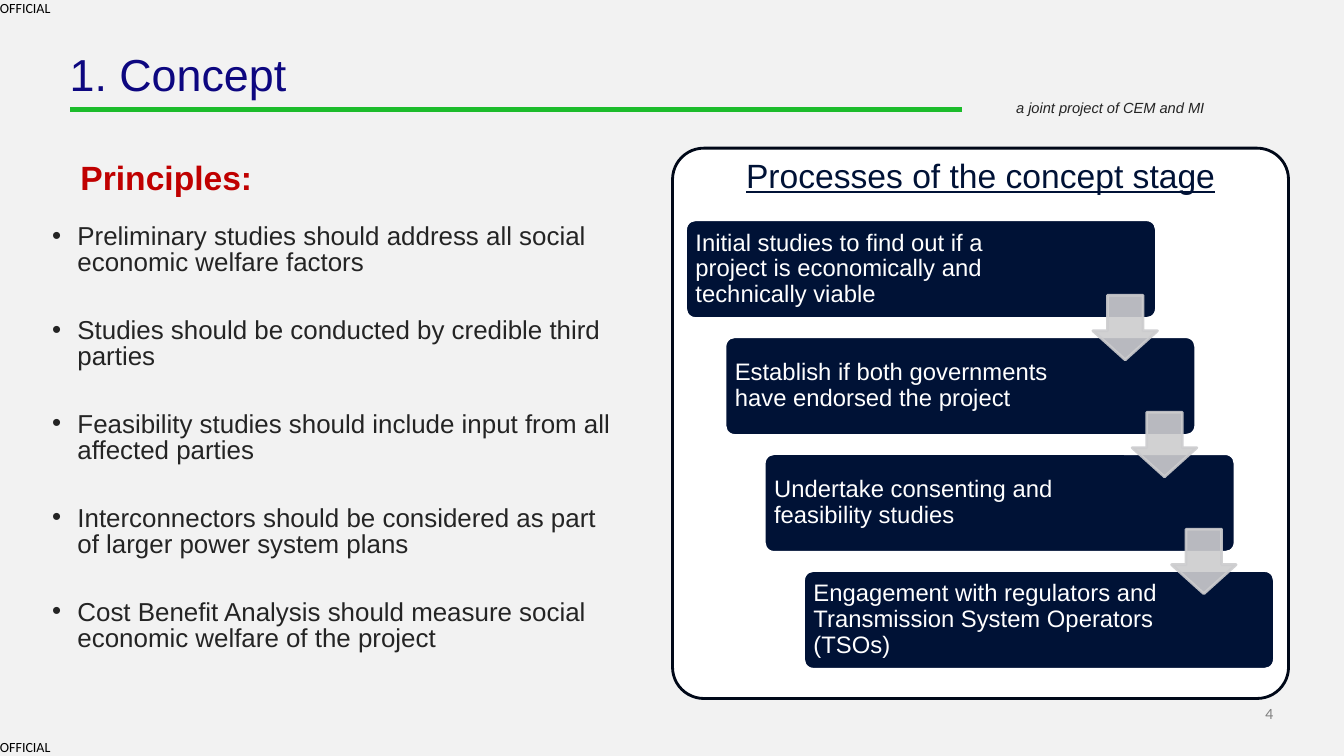
"""Build the concept stage slide."""
from pptx import Presentation
from pptx.dml.color import RGBColor
from pptx.enum.shapes import MSO_SHAPE
from pptx.enum.text import MSO_ANCHOR, MSO_AUTO_SIZE, PP_ALIGN
from pptx.oxml.ns import qn
from pptx.util import Inches, Pt
from lxml.etree import SubElement

HUES = {
    "back": "F2F2F2", "navy": "001236", "edge": "000818", "white": "FFFFFF",
    "green": "1CBC2B", "title": "0D0780", "red": "C00000", "body": "242424",
    "black": "000000", "grey": "7F7F7F", "arrow": "CCCCCE",
}
RULES = [
    "Preliminary studies should address all social economic welfare factors",
    "Studies should be conducted by credible third parties",
    "Feasibility studies should include input from all affected parties",
    "Interconnectors should be considered as part of larger power system plans",
    "Cost Benefit Analysis should measure social economic welfare of the project",
]
STEPS = [
    "Initial studies to find out if a project is economically and technically viable",
    "Establish if both governments have endorsed the project",
    "Undertake consenting and feasibility studies",
    "Engagement with regulators and Transmission System Operators (TSOs)",
]


def hue(name):
    return RGBColor.from_string(HUES[name])


def place(shape, box):
    shape.left, shape.top, shape.width, shape.height = map(Inches, box)


def write(frame, lines, size=18, color="body", face="Arial", bold=False,
          italic=False, under=False, align=PP_ALIGN.LEFT, anchor=MSO_ANCHOR.TOP,
          inset=(0, 0, 0, 0), wrap=True, pitch=1.0, after=0, bullet=False):
    """Fill a text frame, one paragraph per line."""
    frame.auto_size = MSO_AUTO_SIZE.NONE
    frame.word_wrap = wrap
    frame.vertical_anchor = anchor
    (frame.margin_left, frame.margin_top,
     frame.margin_right, frame.margin_bottom) = map(Inches, inset)
    for i, line in enumerate(lines):
        para = frame.add_paragraph() if i else frame.paragraphs[0]
        para.alignment = align
        para.line_spacing = pitch
        para.space_before, para.space_after = Pt(0), Pt(after)
        if bullet:
            props = para._p.get_or_add_pPr()
            props.set("marL", str(Inches(0.31)))
            props.set("indent", str(Inches(-0.25)))
            SubElement(props, qn("a:buFont")).set("typeface", "Arial")
            SubElement(props, qn("a:buChar")).set("char", "•")
        run = para.add_run()
        run.text = line
        font = run.font
        font.name, font.size, font.bold = face, Pt(size), bold
        font.italic, font.underline = italic, under
        font.color.rgb = hue(color)


def label(slide, box, *lines, **style):
    frame = slide.shapes.add_textbox(*map(Inches, box)).text_frame
    write(frame, lines, **style)


def block(slide, kind, box, fill, edge, width=2, adjust=(), alpha=None):
    """Add a preset shape with a plain fill and outline."""
    shape = slide.shapes.add_shape(kind, *map(Inches, box))
    shape.shadow.inherit = False
    shape.fill.solid()
    shape.fill.fore_color.rgb = hue(fill)
    shape.line.color.rgb = hue(edge)
    shape.line.width = Pt(width)
    for i, value in enumerate(adjust):
        shape.adjustments[i] = value
    if alpha:
        for tint in shape._element.spPr.iter(qn("a:srgbClr")):
            SubElement(tint, qn("a:alpha")).set("val", str(alpha * 1000))
    return shape


def stairs(slide, left, top, across, down):
    """Draw the steps, then the arrows that join them."""
    for i, step in enumerate(STEPS):
        box = (left + i * across, top + i * down, 4.67, 0.98)
        shape = block(slide, MSO_SHAPE.ROUNDED_RECTANGLE, box, "navy", "white",
                      adjust=[0.1])
        write(shape.text_frame, [step], size=17, color="white", pitch=0.9,
              anchor=MSO_ANCHOR.MIDDLE, inset=(0.07, 0.07, 1.08, 0.07))
    for i in range(len(STEPS) - 1):
        box = (left + 4.04 + i * across, top + 0.75 + i * down, 0.64, 0.64)
        block(slide, MSO_SHAPE.DOWN_ARROW, box, "arrow", "arrow",
              adjust=[0.55, 0.45], alpha=90)


def main():
    deck = Presentation()
    deck.slide_width, deck.slide_height = Inches(13.33), Inches(7.5)
    slide = deck.slides.add_slide(deck.slide_layouts[5])
    slide.background.fill.solid()
    slide.background.fill.fore_color.rgb = hue("back")

    place(slide.shapes.title, (0.69, 0.52, 8.86, 0.48))
    write(slide.shapes.title.text_frame, ["1. Concept"], size=32,
          color="title", pitch=0.9)
    for top in (0, 7.33):
        label(slide, (0, top, 0.53, 0.17), "OFFICIAL", size=10,
              color="black", face="Calibri", wrap=False)
    label(slide, (12.21, 7, 0.42, 0.17), "4", size=10, color="grey",
          face="Lato", align=PP_ALIGN.RIGHT, anchor=MSO_ANCHOR.BOTTOM)
    block(slide, MSO_SHAPE.RECTANGLE, (0.7, 1.07, 8.84, 0.04), "green",
          "green", width=0.01)
    pad = (0.1, 0.05, 0.1, 0.05)
    label(slide, (9.98, 0.93, 2.43, 0.28), "a joint project of CEM and MI",
          size=10.5, italic=True, inset=pad)

    label(slide, (0.69, 1.51, 1.92, 0.5), "Principles:", size=24, color="red",
          bold=True, align=PP_ALIGN.CENTER, inset=pad, wrap=False)
    label(slide, (0.36, 2.18, 5.91, 4.74), *RULES, size=18.5, pitch=0.84,
          after=29.7, bullet=True, inset=pad)

    block(slide, MSO_SHAPE.ROUNDED_RECTANGLE, (6.67, 1.47, 6.11, 5.46),
          "white", "edge", adjust=[0.057])
    label(slide, (7.35, 1.58, 4.75, 0.37), "Processes of the concept stage",
          size=24, color="navy", under=True, align=PP_ALIGN.CENTER, pitch=0.9)
    stairs(slide, 6.8, 2.18, 0.39, 1.16)
    deck.save("out.pptx")


if __name__ == "__main__":
    main()
